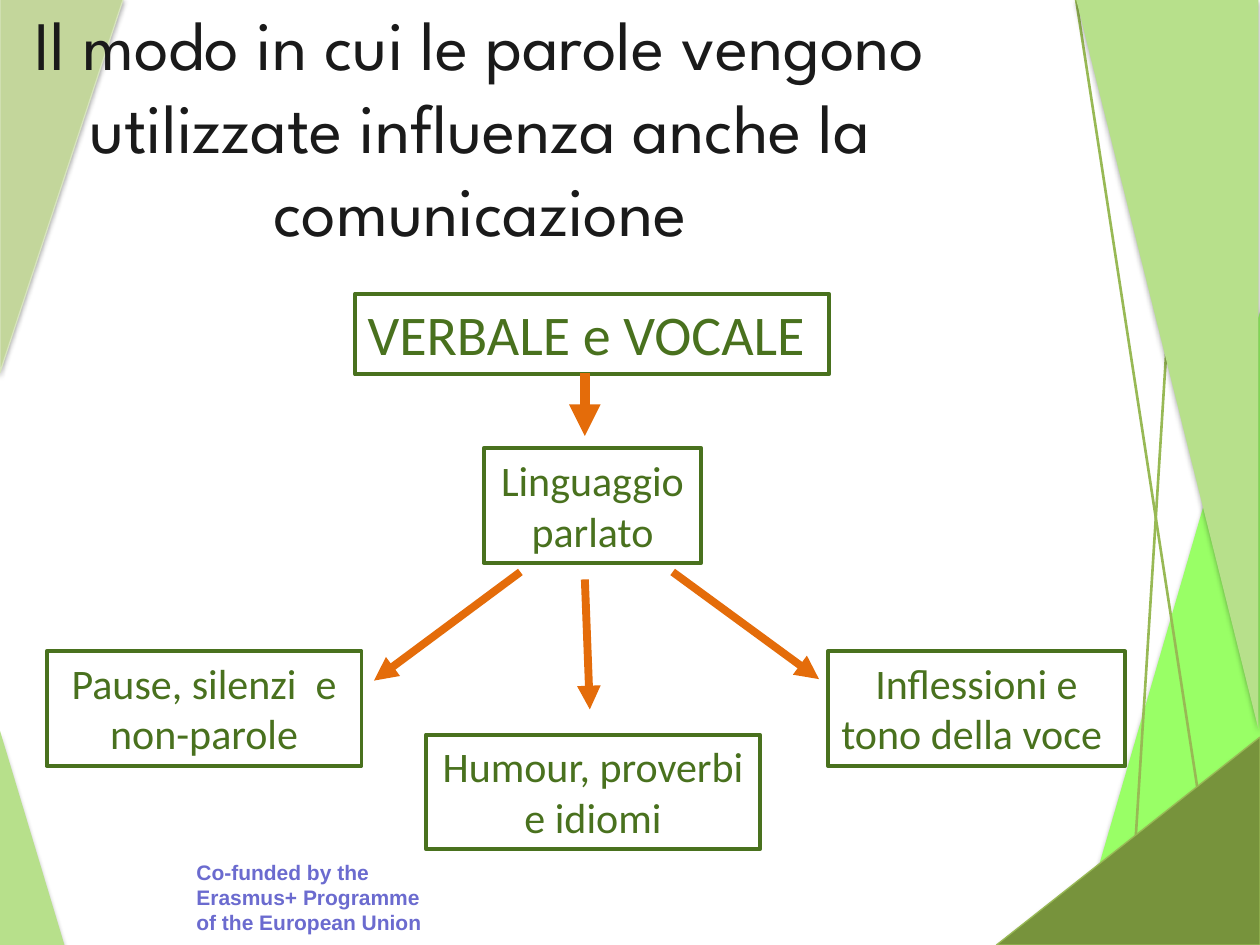
from dataclasses import dataclass
from lxml import etree
from pptx import Presentation
from pptx import util as u
from pptx.dml.color import RGBColor
from pptx.enum import shapes, text
from pptx.oxml import ns


@dataclass(frozen=True)
class Theme:
    ink: str = "1A1A1A"
    box: str = "49711E"
    arrow: str = "E46C0A"
    credit: str = "6B6BCF"
    lime: str = "99FF66"
    light: str = "B7E08B"
    sage: str = "C3D69B"
    pale: str = "D7E4BD"
    olive: str = "77933C"
    edge: str = "98B955"
    shadow: str = "000000"
    title_size: float = 39.6
    head_size: float = 32
    body_size: float = 24
    credit_size: float = 12


T = Theme()
CENTER = text.PP_ALIGN.CENTER
LEFT = text.PP_ALIGN.LEFT


def add_child(parent, tag, **attrs):
    child = etree.SubElement(parent, ns.qn(tag))
    for key, value in attrs.items():
        child.set(key, str(value))
    return child


def set_line(line, color, width):
    line.color.rgb = RGBColor.from_string(color)
    line.width = u.Pt(width)


def write(sp, words, size, color, font, align=CENTER, bold=False,
          anchor=text.MSO_ANCHOR.TOP, fit=text.MSO_AUTO_SIZE.SHAPE_TO_FIT_TEXT):
    tf = sp.text_frame
    frame = {"word_wrap": True, "auto_size": fit, "vertical_anchor": anchor}
    for key, value in frame.items():
        setattr(tf, key, value)
    p = tf.paragraphs[0]
    p.alignment = align
    r = p.add_run()
    r.text = words
    for key, value in {"name": font, "size": u.Pt(size), "bold": bold}.items():
        setattr(r.font, key, value)
    r.font.color.rgb = RGBColor.from_string(color)


def add_line(slide, start, end, color, width, arrow=False):
    cx = slide.shapes.add_connector(
        shapes.MSO_CONNECTOR.STRAIGHT, *map(u.Cm, (*start, *end)))
    set_line(cx.line, color, width)
    if arrow:
        add_child(cx.line._get_or_add_ln(), "a:tailEnd", type="triangle")
    add_child(cx._element.spPr, "a:effectLst")


def add_triangle(slide, box, fill, flips="", edge=None, opacity=35, distance=1.8):
    sp = slide.shapes.add_shape(
        shapes.MSO_SHAPE.RIGHT_TRIANGLE, *map(u.Cm, box))
    sp.fill.solid()
    sp.fill.fore_color.rgb = RGBColor.from_string(fill)
    if edge:
        set_line(sp.line, edge, 0.75)
    else:
        sp.line.fill.background()
    spPr = sp._element.spPr
    for axis in flips:
        spPr.get_or_add_xfrm().set(f"flip{axis}", "1")
    sp.shadow.inherit = False
    shadow = add_child(spPr.find(ns.qn("a:effectLst")), "a:outerShdw",
                       blurRad=u.Pt(3.1), dist=u.Pt(distance),
                       dir=90 * 60000, rotWithShape=0)
    color = add_child(shadow, "a:srgbClr", val=T.shadow)
    add_child(color, "a:alpha", val=opacity * 1000)


def add_left_edge(slide, left, top):
    add_triangle(slide, (left, top + 14.76, 1.3, 4.32), T.light)
    add_triangle(slide, (left, top, 2.49, 7.54), T.sage, "V", T.pale)


def add_right_edge(slide, left, top):
    add_triangle(slide, (left + 1.6, top + 6.15, 3.76, 12.93), T.lime, "H",
                 opacity=38, distance=1.6)
    for start, end in (((2.67, 19.08), (3.53, 5.36)), ((4.42, 18.34), (1.6, 0))):
        add_line(slide, (left + start[0], top + start[1]),
                 (left + end[0], top + end[1]), T.edge, 1.5)
    add_triangle(slide, (left + 1.6, top, 3.68, 14.73), T.light, "HV")
    add_triangle(slide, (left, top + 14.89, 5.31, 4.19), T.olive, "H", T.edge)


def add_credit(slide, *box):
    tb = slide.shapes.add_textbox(*map(u.Cm, box))
    write(tb, "Co-funded by the Erasmus+ Programme of the European Union",
          T.credit_size, T.credit, "Arial", LEFT, bold=True)


def add_title(slide, *box):
    tb = slide.shapes.add_textbox(*map(u.Cm, box))
    write(tb, "Il modo in cui le parole vengono utilizzate influenza anche "
          "la comunicazione", T.title_size, T.ink, "League Spartan",
          anchor=text.MSO_ANCHOR.MIDDLE, fit=text.MSO_AUTO_SIZE.NONE)


def add_diagram(slide, left, top):
    row = 2.31
    boxes = [
        ("VERBALE e VOCALE", 6.22, 0, 9.55, 1.63, T.head_size, LEFT),
        ("Linguaggio parlato", 8.81, 3.12, 4.39, row, T.body_size, CENTER),
        ("Pause, silenzi  e non-parole", 0, 7.21, 6.35, row, T.body_size, CENTER),
        ("Humour, proverbi e idiomi", 7.65, 8.89, 6.73, row, T.body_size, CENTER),
        ("Inflessioni e tono della voce ", 15.75, 7.21, 5.99, row, T.body_size, CENTER),
    ]
    for words, x, y, w, h, size, align in boxes:
        sp = slide.shapes.add_shape(
            shapes.MSO_SHAPE.RECTANGLE, *map(u.Cm, (left + x, top + y, w, h)))
        sp.shadow.inherit = False
        sp.fill.background()
        set_line(sp.line, T.box, 2.25)
        write(sp, words, size, T.box, "Calibri", align)

    arrows = [
        ((9.55, 5.61), (6.6, 7.8), 4.5),
        ((10.85, 5.76), (10.95, 8.38), 4.5),
        ((12.62, 5.61), (15.57, 7.77), 4.5),
        ((10.85, 1.6), (10.85, 2.87), 6),
    ]
    for (x1, y1), (x2, y2), width in arrows:
        add_line(slide, (left + x1, top + y1), (left + x2, top + y2),
                 T.arrow, width, arrow=True)


def main():
    prs = Presentation()
    prs.slide_width, prs.slide_height = u.Cm(25.4), u.Cm(19.05)
    slide = prs.slides.add_slide(prs.slide_layouts[6])
    add_left_edge(slide, 0, -0.03)
    add_right_edge(slide, 20.09, -0.03)
    add_credit(slide, 3.71, 17.2, 5.08, 1.8)
    add_title(slide, -0.08, 0.25, 19.51, 4.57)
    add_diagram(slide, 0.94, 5.92)
    prs.save("out.pptx")


if __name__ == "__main__":
    main()
